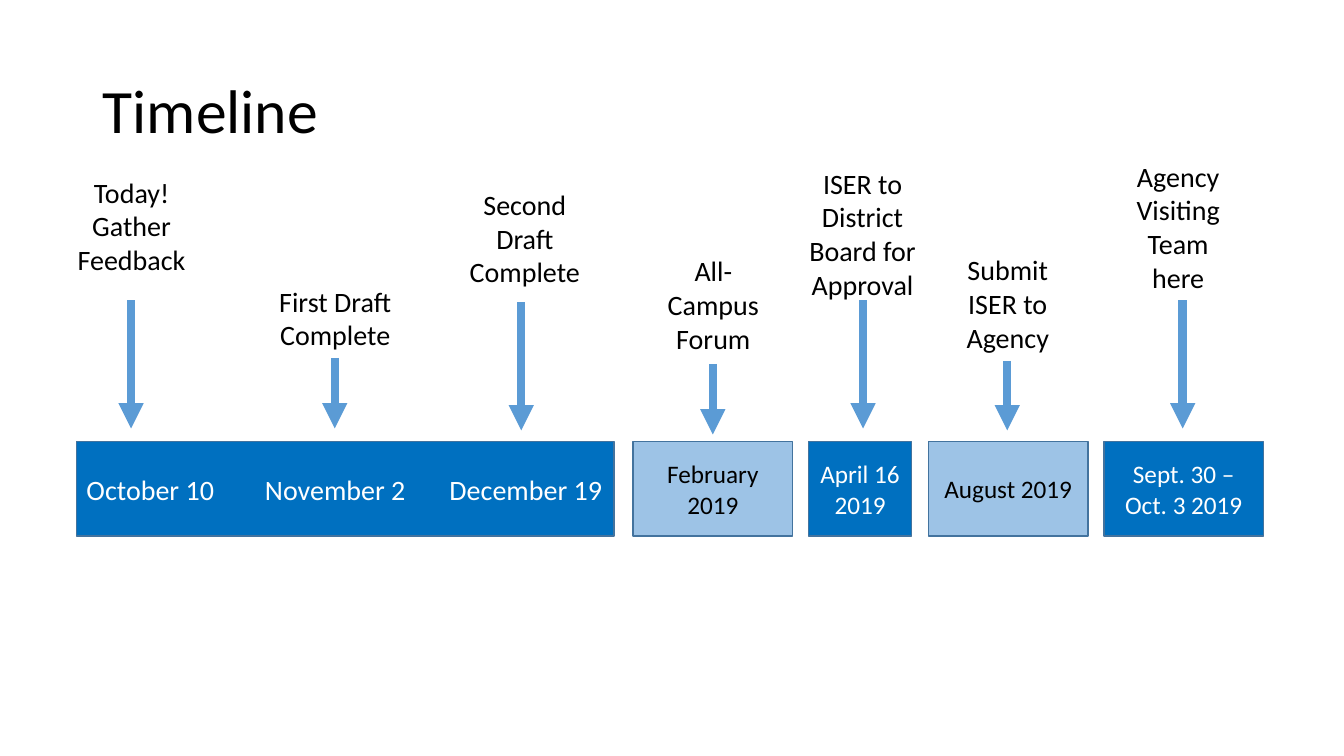
from lxml import etree
from pptx import Presentation
from pptx.dml.color import RGBColor
from pptx.enum.shapes import MSO_CONNECTOR as Link, MSO_SHAPE as Shape
from pptx.enum.text import MSO_ANCHOR as Anchor, MSO_AUTO_SIZE as Fit, PP_ALIGN as Align
from pptx.oxml.ns import qn
from pptx.util import Inches, Pt

BLUE, PALE, EDGE, ARROW = "0070C0", "9DC3E6", "43739E", "5B9BD5"
BLACK, WHITE = "000000", "FFFFFF"


def color(code):
    return RGBColor.from_string(code)


def write(frame, lines, size, code, align=Align.CENTER):
    frame.word_wrap = True
    for i, line in enumerate(lines):
        para = frame.add_paragraph() if i else frame.paragraphs[0]
        para.alignment = align
        run = para.add_run()
        run.text = line
        run.font.name = "Calibri"
        run.font.size = Pt(size)
        run.font.color.rgb = color(code)


deck = Presentation()
deck.slide_width, deck.slide_height = Inches(13.33), Inches(7.5)
slide = deck.slides.add_slide(deck.slide_layouts[5])
shapes = slide.shapes

# Title
title = shapes.title
title.left, title.top = Inches(0.92), Inches(0.4)
title.width, title.height = Inches(11.5), Inches(1.45)
frame = title.text_frame
frame.auto_size = Fit.NONE
frame.vertical_anchor = Anchor.MIDDLE
write(frame, ["Timeline"], 44, BLACK, Align.LEFT)
frame.paragraphs[0].line_spacing = 0.9

# Date boxes: left, width, fill, text colour, size, lines
dates = [
    (0.76, 5.33, BLUE, WHITE, 20, ["October 10\tNovember 2\tDecember 19"]),
    (6.28, 1.58, PALE, BLACK, 18, ["February", "2019"]),
    (8.02, 1.02, BLUE, WHITE, 18, ["April 16 2019"]),
    (9.21, 1.58, PALE, BLACK, 18, ["August 2019"]),
    (10.95, 1.58, BLUE, WHITE, 18, ["Sept. 30 – Oct. 3 2019"]),
]
boxes = []
for left, width, fill, ink, size, lines in dates:
    box = shapes.add_shape(Shape.RECTANGLE, Inches(left), Inches(4.38),
                           Inches(width), Inches(0.94))
    box.shadow.inherit = False
    box.fill.solid()
    box.fill.fore_color.rgb = color(fill)
    box.line.color.rgb = color(EDGE)
    box.line.width = Pt(1)
    box.text_frame.vertical_anchor = Anchor.MIDDLE
    write(box.text_frame, lines, size, ink)
    boxes.append(box)

# Tab stops that space the three dates in the wide box
para = boxes[0].text_frame.paragraphs[0]
para.alignment = Align.LEFT
tabs = etree.SubElement(para._p.get_or_add_pPr(), qn("a:tabLst"))
for stop in (1.77, 3.6):
    etree.SubElement(tabs, qn("a:tab"), pos=str(Inches(stop)), algn="l")

# Events: label left, top, width, height, text, then arrow x, start, end
events = [
    (0.66, 1.69, 1.29, 1.11, "Today! Gather Feedback", 1.3, 2.98, 4.25),
    (2.61, 2.77, 1.43, 0.77, "First Draft Complete", 3.32, 3.55, 4.25),
    (4.52, 1.81, 1.37, 1.11, "Second Draft Complete", 5.17, 3, 4.27),
    (6.43, 2.47, 1.29, 1.11, "All-Campus Forum", 7.07, 3.61, 4.31),
    (7.91, 1.6, 1.29, 1.45, "ISER to District Board for Approval", 8.56, 2.98, 4.25),
    (9.35, 2.46, 1.29, 1.11, "Submit ISER to Agency", 9.99, 3.58, 4.27),
    (11.04, 1.53, 1.29, 1.45, "Agency Visiting Team here", 11.73, 2.98, 4.25),
]
for left, top, width, height, text, x, start, end in events:
    label = shapes.add_textbox(Inches(left), Inches(top), Inches(width), Inches(height))
    label.text_frame.auto_size = Fit.SHAPE_TO_FIT_TEXT
    write(label.text_frame, [text], 20, BLACK)

    arrow = shapes.add_connector(Link.STRAIGHT, Inches(x), Inches(start),
                                 Inches(x), Inches(end))
    arrow.line.color.rgb = color(ARROW)
    arrow.line.width = Pt(6)
    etree.SubElement(arrow.line._get_or_add_ln(), qn("a:tailEnd"), type="triangle")
    etree.SubElement(arrow._element.spPr, qn("a:effectLst"))

deck.save("out.pptx")
